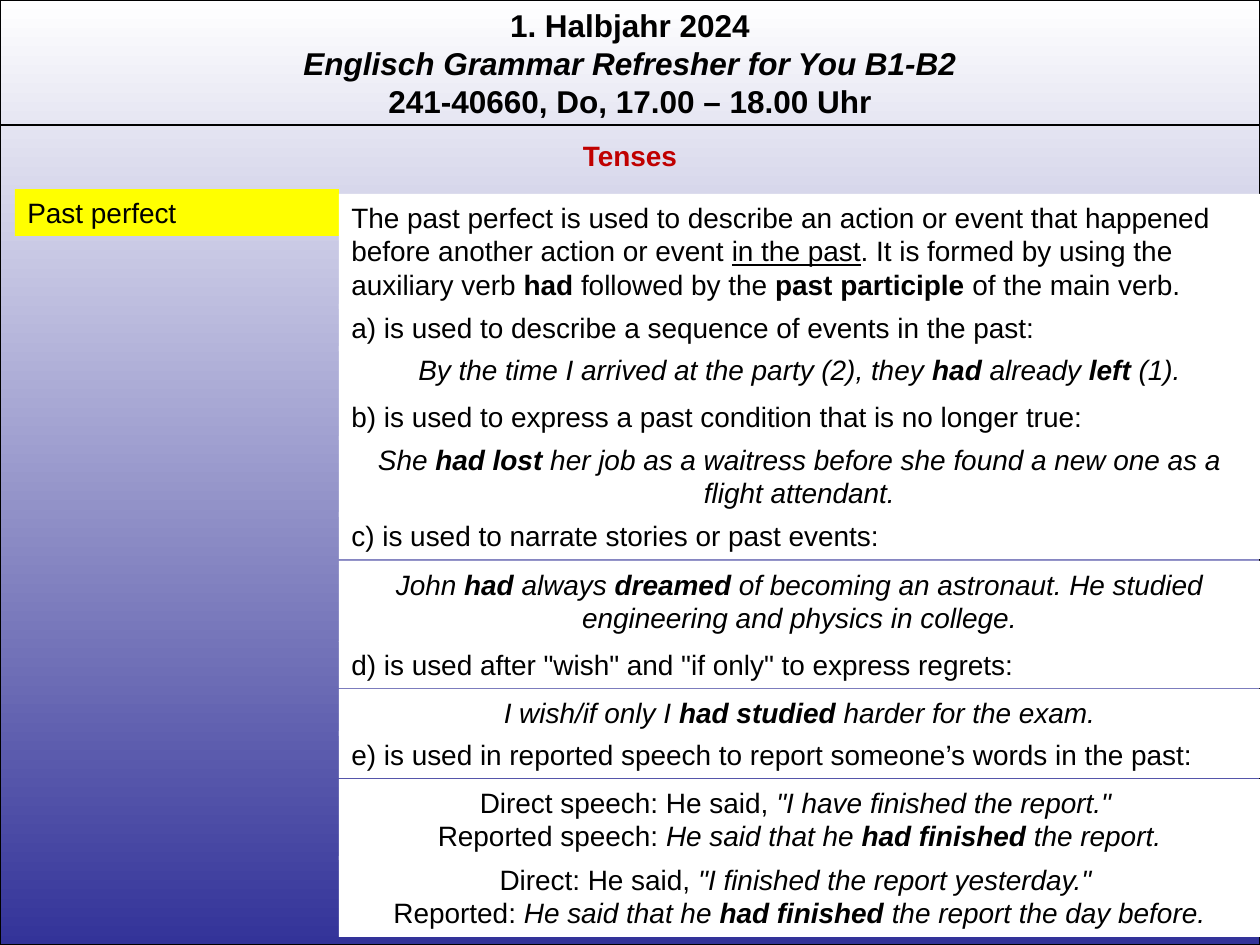
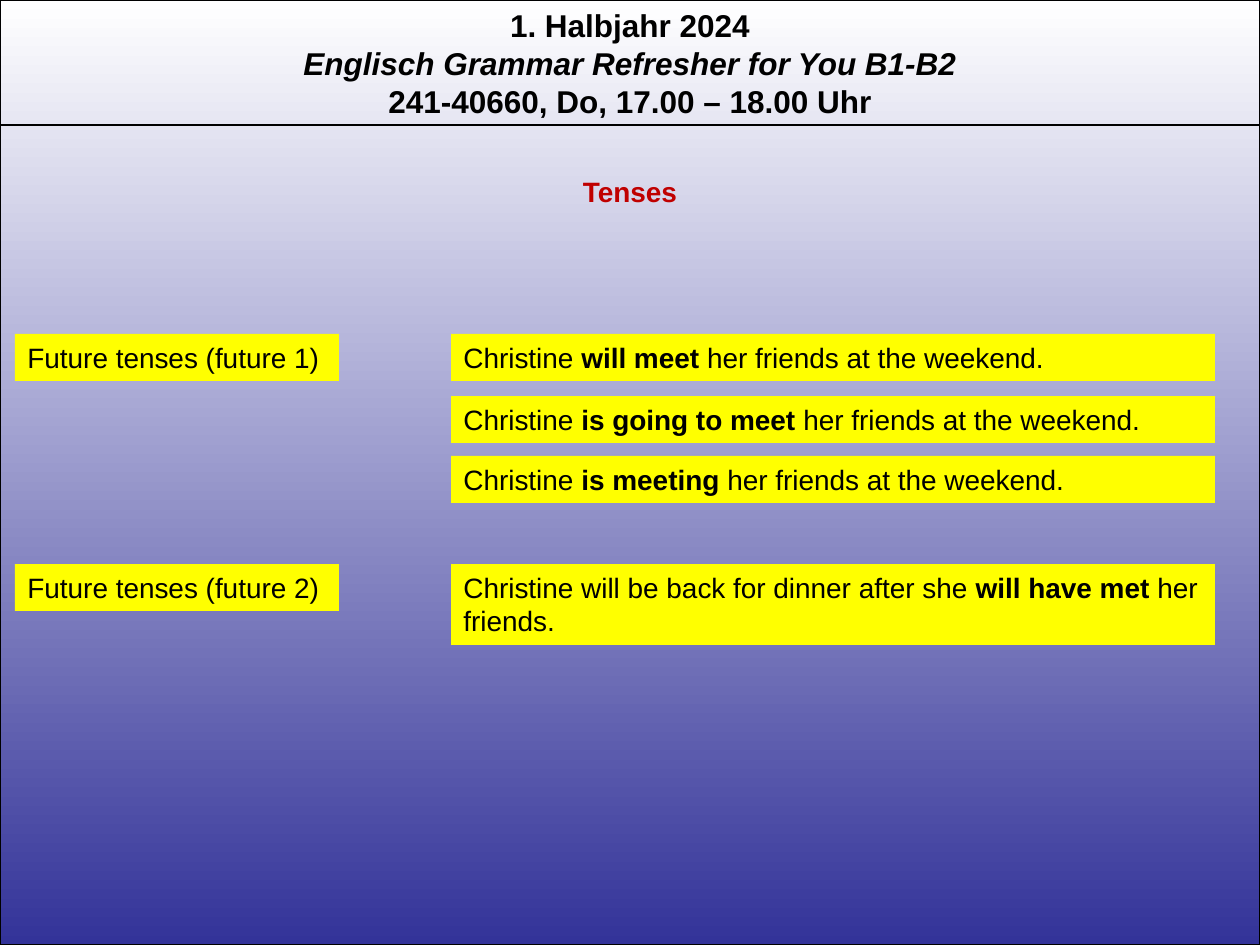
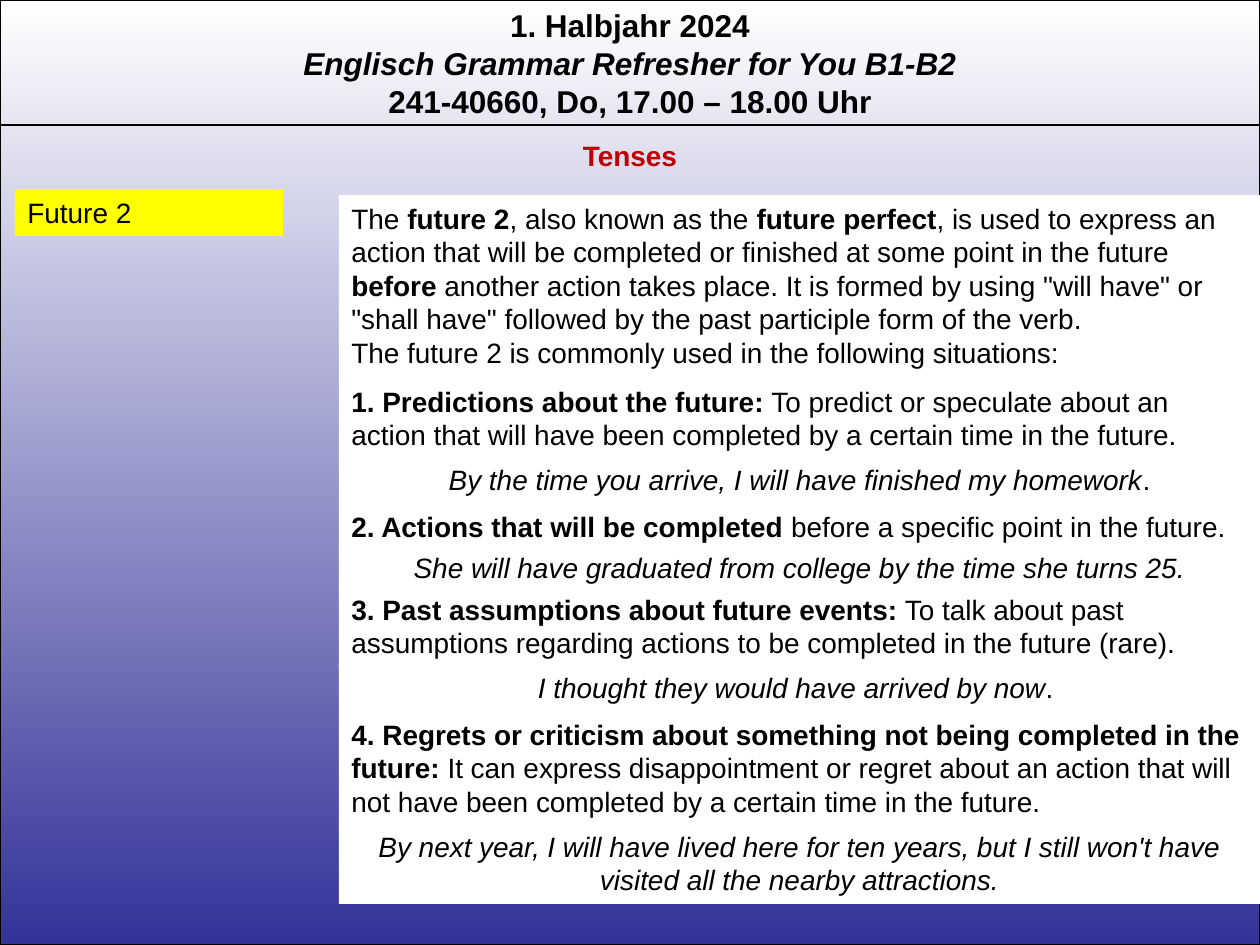
from lxml import etree
from pptx import Presentation
from pptx.dml.color import RGBColor
from pptx.enum.shapes import MSO_CONNECTOR, MSO_SHAPE
from pptx.enum.text import MSO_AUTO_SIZE, PP_ALIGN
from pptx.oxml.ns import qn
from pptx.util import Pt

PX = 914400 / 126
WIDE, HIGH = 1260, 945
BLACK = RGBColor(0x00, 0x00, 0x00)
WHITE = RGBColor(0xFF, 0xFF, 0xFF)
BLUE = RGBColor(0x33, 0x33, 0x99)
RED = RGBColor(0xC0, 0x00, 0x00)
YELLOW = RGBColor(0xFF, 0xFF, 0x00)
LEFT, MID = PP_ALIGN.LEFT, PP_ALIGN.CENTER
GROW = MSO_AUTO_SIZE.SHAPE_TO_FIT_TEXT
RECT, STRAIGHT = MSO_SHAPE.RECTANGLE, MSO_CONNECTOR.STRAIGHT
MARKS = {"*": "bold", "_": "italic", "~": "underline"}


def px(*nums):
    return [round(n * PX) for n in nums]


def add_box(slide, x, y, wide, rows, text, align=LEFT, fill=None, size=16, color=BLACK):
    high = 13 + round(rows * size * 2.125)
    box = slide.shapes.add_textbox(*px(x, y, wide, high))
    if fill is not None:
        box.fill.solid()
        box.fill.fore_color.rgb = fill
    frame = box.text_frame
    frame.word_wrap = True
    frame.auto_size = GROW
    for i, line in enumerate(text.split("\n")):
        para = frame.paragraphs[0] if i == 0 else frame.add_paragraph()
        para.alignment = align
        para.font.name = "Arial"
        para.font.size = Pt(size)
        para.font.color.rgb = color
        state = dict.fromkeys(MARKS.values(), False)
        runs, part = [], ""
        for char in line + "\n":
            if char not in MARKS and char != "\n":
                part += char
                continue
            if part:
                run = para.add_run()
                run.text = part
                runs.append((run, dict(state)))
                part = ""
            if char in MARKS:
                state[MARKS[char]] = not state[MARKS[char]]
        for name in MARKS.values():
            kinds = {style[name] for run, style in runs}
            if len(kinds) == 1:
                setattr(para.font, name, kinds.pop())
            else:
                for run, style in runs:
                    setattr(run.font, name, style[name])


HEAD = """*1. Halbjahr 2024*
*_Englisch Grammar Refresher for You B1-B2_*
*241-40660, Do, 17.00 – 18.00 Uhr*"""

PAST = [
    (304, 1, LEFT, "a) is used to describe a sequence of events in the past:"),
    (393, 1, LEFT, "b) is used to express a past condition that is no longer true:"),
    (436, 2, MID, "_She *had lost *her job as a waitress before she found a new one as a flight attendant._"),
    (346, 1, MID, "_By the time I arrived at the party (2), they *had *already *left* (1)._"),
    (512, 1, LEFT, "c) is used to narrate stories or past events:"),
    (561, 2, MID, "_John *had* always *dreamed* of becoming an astronaut. He studied engineering and physics in college._"),
    (689, 1, MID, "_I wish/if only I *had studied *harder for the exam._"),
    (779, 2, MID, 'Direct speech: He said, _"I have finished the report." _\n'
     "Reported speech: _He said that he *had finished *the report._"),
    (194, 3, LEFT, "The past perfect is used to describe an action or event that happened before another action "
     "or event ~in the past~. It is formed by using the auxiliary verb *had* followed by the "
     "*past participle *of the main verb."),
    (641, 1, LEFT, 'd) is used after "wish" and "if only" to express regrets:'),
    (731, 1, LEFT, "e) is used in reported speech to report someone’s words in the past:"),
    (856, 2, MID, 'Direct: He said, _"I finished the report yesterday." _\n'
     "Reported: _He said that he *had finished *the report the day before._"),
]

NEXT = [
    (334, 1, LEFT, "Christine *will meet *her friends at the weekend."),
    (564, 2, LEFT, "Christine will be back for dinner after she *will have met *her friends."),
    (396, 1, LEFT, "Christine *is going to meet *her friends at the weekend."),
    (456, 1, LEFT, "Christine *is meeting *her friends at the weekend."),
]

DONE = [
    (378, 2, LEFT, "*1. Predictions about the future:* To predict or speculate about an action that will have "
     "been completed by a certain time in the future."),
    (456, 1, MID, "_By the time you arrive, I will have finished my homework_."),
    (503, 1, LEFT, "*2. Actions that will be completed *before a specific point in the future."),
    (195, 5, LEFT, "The *future 2*, also known as the *future perfect*, is used to express an action that will be "
     "completed or finished at some point in the future *before* another action takes place. It is formed by "
     'using "will have" or "shall have" followed by the past participle form of the verb.\n'
     "The future 2 is commonly used in the following situations:"),
    (544, 1, MID, "_She will have graduated from college by the time she turns 25._"),
    (586, 2, LEFT, "*3. Past assumptions about future events:* To talk about past assumptions regarding actions "
     "to be completed in the future (rare)."),
    (664, 1, MID, "_I thought they would have arrived by now_. "),
    (711, 3, LEFT, "*4. Regrets or criticism about something not being completed in the future:* It can express "
     "disappointment or regret about an action that will not have been completed by a certain time in the future."),
    (823, 2, MID, "_By next year, I will have lived here for ten years, but I still won't have visited all the "
     "nearby attractions._"),
]

SLIDES = [
    (132, [(189, 324, "Past perfect")], 339, 921, WHITE, PAST),
    (168, [(334, 324, "Future tenses (future 1)"), (564, 324, "Future tenses (future 2)")], 451, 764, YELLOW, NEXT),
    (132, [(189, 268, "Future 2")], 339, 921, WHITE, DONE),
]

deck = Presentation()
deck.slide_width, deck.slide_height = px(WIDE, HIGH)

for top, tags, x, wide, fill, notes in SLIDES:
    slide = deck.slides.add_slide(deck.slide_layouts[6])
    back = slide.shapes.add_shape(RECT, *px(0, 0, WIDE, HIGH))
    back.shadow.inherit = False
    back.fill.gradient()
    back.fill.gradient_angle = 270
    for stop, color in zip(back.fill.gradient_stops, (WHITE, BLUE)):
        stop.color.rgb = color
    rule = slide.shapes.add_connector(STRAIGHT, *px(0, 125, WIDE, 125))
    etree.SubElement(rule.element.spPr, qn("a:effectLst"))
    for edge in (back, rule):
        edge.line.color.rgb = BLACK
        edge.line.width = Pt(0.75)
    add_box(slide, 0, 0, WIDE, 3, HEAD, MID, size=18)
    add_box(slide, 0, top, WIDE, 1, "*Tenses*", MID, color=RED)
    for y, span, text in tags:
        add_box(slide, 15, y, span, 1, text, fill=YELLOW)
    for y, rows, align, text in notes:
        add_box(slide, x, y, wide, rows, text, align, fill)

deck.save("out.pptx")
